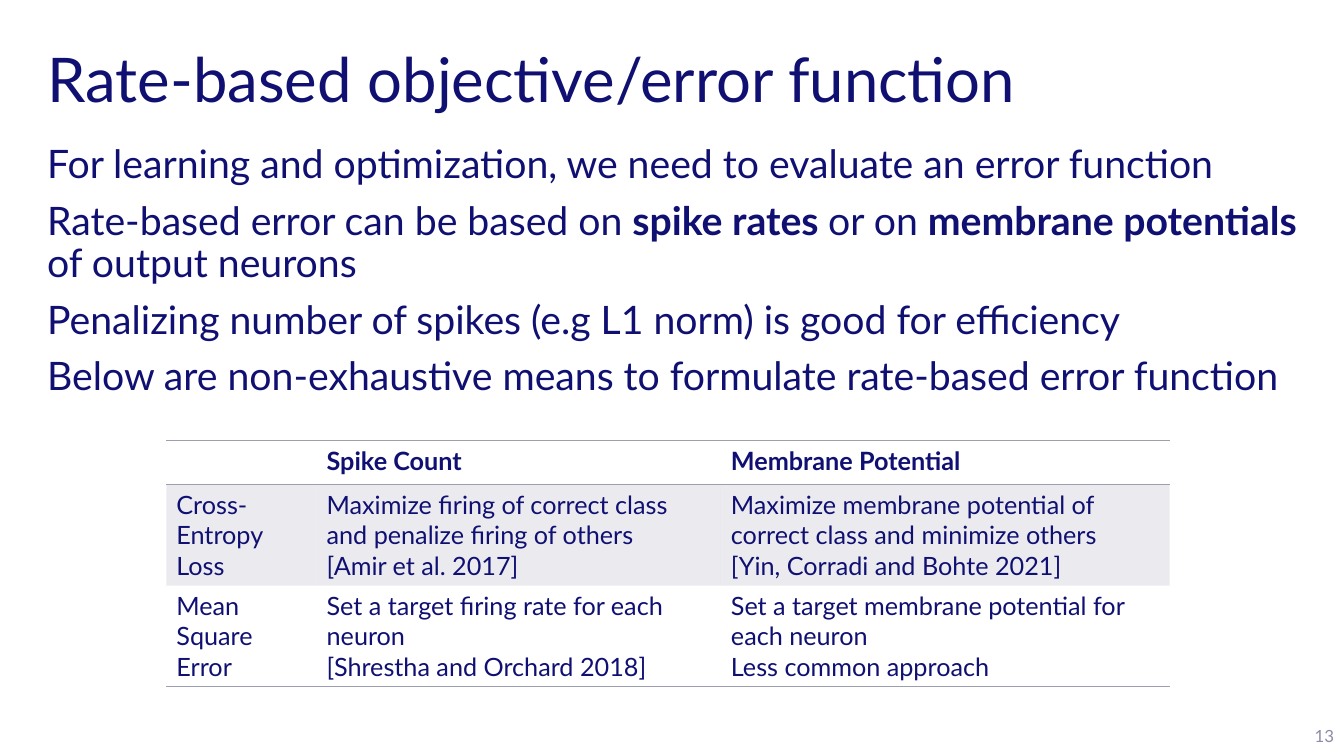
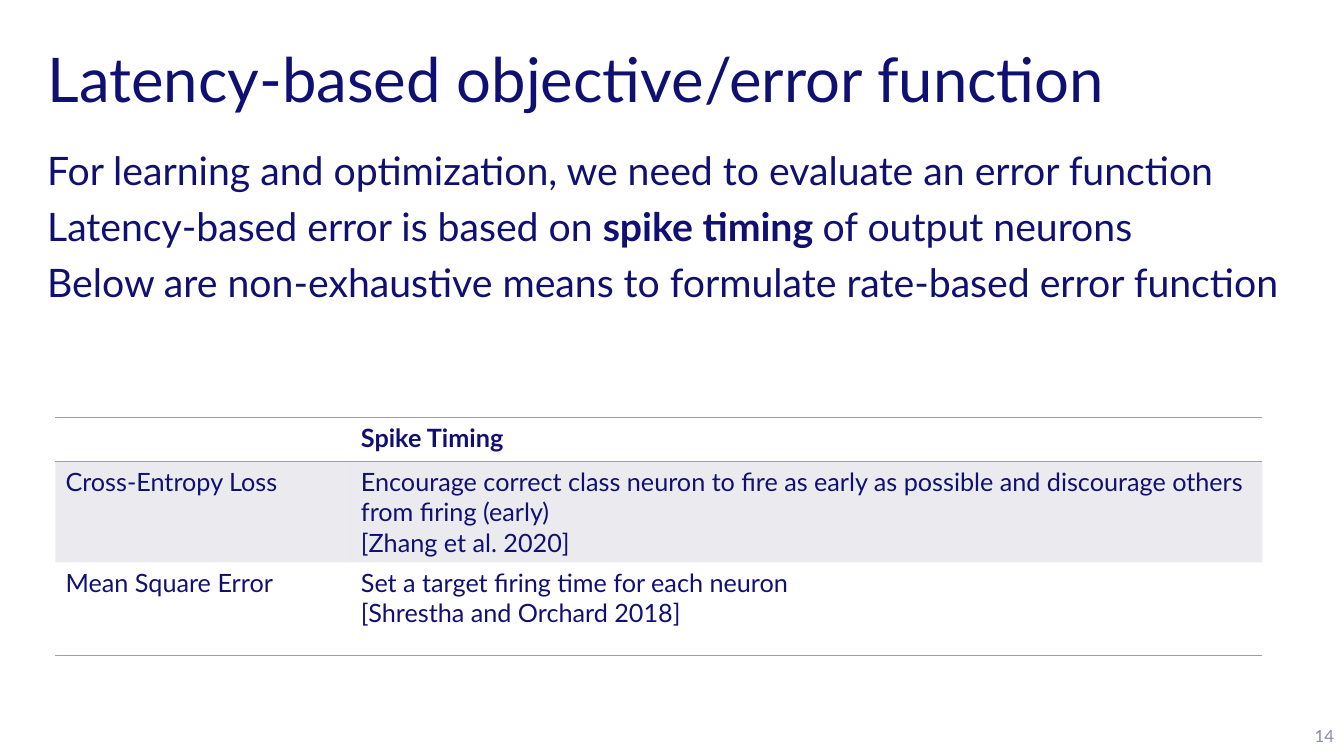
from dataclasses import dataclass

import lxml.etree
import pptx
import pptx.dml.color
import pptx.enum.text
import pptx.oxml.ns
import pptx.util

Inches = pptx.util.Inches
Pt = pptx.util.Pt
ANCHOR = pptx.enum.text.MSO_ANCHOR
ALIGN = pptx.enum.text.PP_ALIGN

# Shared look
FONT = "Lato"
NAVY = "101073"
RULE_GREY = "9E9EB1"
NUMBER_GREY = "8C8CA6"
BAND_OPACITY = 20
LEFT, TEXT_WIDTH = 0.37, 12.6
TITLE_ONLY = 5
PLAIN_TABLE_STYLE = "{2D5ABB26-0587-4C30-8999-92F81FD0307C}"


@dataclass
class Span:
    text: str
    bold: bool = False


@dataclass
class LossTable:
    left: float
    top: float
    columns: list[float]
    rows: list[float]
    cells: list[list[list[str]]]  # rows of cells, each a list of paragraphs


@dataclass
class ErrorSlide:
    number: int
    title: str
    body_top: float
    body: list[list[Span]]
    losses: LossTable


def rgb(value: str) -> pptx.dml.color.RGBColor:
    return pptx.dml.color.RGBColor.from_string(value)


def add_run(paragraph, span: Span, size: float, color: str = NAVY) -> None:
    run = paragraph.add_run()
    run.text = span.text
    run.font.name = FONT
    run.font.size = Pt(size)
    run.font.bold = span.bold
    run.font.color.rgb = rgb(color)


def fill_frame(frame, paragraphs: list[list[Span]], size: float, color: str = NAVY,
               align=ALIGN.LEFT, spacing: float = 1.0, before: float = 0) -> None:
    for index, spans in enumerate(paragraphs):
        paragraph = frame.add_paragraph() if index else frame.paragraphs[0]
        paragraph.alignment = align
        paragraph.line_spacing = spacing
        paragraph.space_before = Pt(before)
        for span in spans:
            add_run(paragraph, span, size, color)


def place(shape, left: float, top: float, width: float, height: float, anchor):
    """Position a text shape and return its wrapping text frame."""
    shape.left, shape.top = Inches(left), Inches(top)
    shape.width, shape.height = Inches(width), Inches(height)
    frame = shape.text_frame
    frame.word_wrap = True
    frame.auto_size = pptx.enum.text.MSO_AUTO_SIZE.NONE
    frame.vertical_anchor = anchor
    return frame


def add_text_box(slide, left: float, top: float, width: float, height: float, anchor):
    box = slide.shapes.add_textbox(0, 0, 0, 0)
    return place(box, left, top, width, height, anchor)


def sub(parent, tag: str, **attributes: str):
    return lxml.etree.SubElement(parent, pptx.oxml.ns.qn(tag), **attributes)


def shade(cell) -> None:
    cell.fill.solid()
    cell.fill.fore_color.rgb = rgb(RULE_GREY)
    for color in cell.fill._xPr.iter(pptx.oxml.ns.qn("a:srgbClr")):
        sub(color, "a:alpha", val=str(BAND_OPACITY * 1000))


def set_rules(cell, edges: str) -> None:
    """Draw the named edges (of L, R, T, B) and clear the others."""
    properties = cell._tc.get_or_add_tcPr()
    for index, edge in enumerate("LRTB"):
        line = sub(properties, f"a:ln{edge}", w=str(Pt(1)))
        if edge in edges:
            sub(sub(line, "a:solidFill"), "a:srgbClr", val=RULE_GREY)
        else:
            sub(line, "a:noFill")
        properties.insert(index, line)  # lines come before the cell fill


def add_loss_table(slide, losses: LossTable) -> None:
    table = slide.shapes.add_table(
        len(losses.rows), len(losses.columns), Inches(losses.left), Inches(losses.top),
        Inches(sum(losses.columns)), Inches(sum(losses.rows))).table
    table.first_row = table.horz_banding = False
    table._tbl.tblPr.find(pptx.oxml.ns.qn("a:tableStyleId")).text = PLAIN_TABLE_STYLE
    for column, width in zip(table.columns, losses.columns):
        column.width = Inches(width)
    for row, height in zip(table.rows, losses.rows):
        row.height = Inches(height)

    row_rules = ["TB", "T", "B"]
    for r, row_cells in enumerate(losses.cells):
        for c, lines in enumerate(row_cells):
            cell = table.cell(r, c)
            fill_frame(cell.text_frame, [[Span(line, bold=r == 0)] for line in lines], 18)
            if r == 1:
                shade(cell)
            else:
                cell.fill.background()
            set_rules(cell, row_rules[r])


def add_error_slide(deck, content: ErrorSlide) -> None:
    slide = deck.slides.add_slide(deck.slide_layouts[TITLE_ONLY])
    # Title
    title = place(slide.shapes.title, LEFT, 0.4, TEXT_WIDTH, 0.83, ANCHOR.MIDDLE)
    fill_frame(title, [[Span(content.title)]], 44, spacing=0.9)
    # Body
    body = add_text_box(slide, LEFT, content.body_top, TEXT_WIDTH, 5.51, ANCHOR.TOP)
    fill_frame(body, content.body, 28, spacing=0.9, before=10)
    # Slide number
    number = add_text_box(slide, 12.65, 7.1, 0.68, 0.4, ANCHOR.MIDDLE)
    fill_frame(number, [[Span(str(content.number))]], 12, NUMBER_GREY, ALIGN.RIGHT)
    # Loss table
    add_loss_table(slide, content.losses)


INTRO = [Span("For learning and optimization, we need to evaluate an error function")]
OUTLOOK = [Span("Below are non-exhaustive means to formulate rate-based error function")]

SLIDES = [
    ErrorSlide(
        13, "Rate-based objective/error function", 1.39,
        [
            INTRO,
            [Span("Rate-based error can be based on "), Span("spike rates ", True),
             Span("or on "), Span("membrane potentials", True),
             Span(" of output neurons")],
            [Span("Penalizing number of spikes (e.g L1 norm) is good for efficiency")],
            OUTLOOK,
        ],
        LossTable(1.65, 4.37, [1.49, 4.01, 4.45], [0.44, 1.0, 1.0], [
            [[], ["Spike Count"], ["Membrane Potential"]],
            [["Cross-Entropy Loss"],
             ["Maximize firing of correct class and penalize firing of others",
              "[Amir et al. 2017]"],
             ["Maximize membrane potential of correct class and minimize others",
              "[Yin, Corradi and Bohte 2021]"]],
            [["Mean Square Error"],
             ["Set a target firing rate for each neuron", "[Shrestha and Orchard 2018]"],
             ["Set a target membrane potential for each neuron", "Less common approach"]],
        ]),
    ),
    ErrorSlide(
        14, "Latency-based objective/error function", 1.45,
        [
            INTRO,
            [Span("Latency-based error is based on "), Span("spike timing ", True),
             Span("of output neurons")],
            OUTLOOK,
        ],
        LossTable(0.55, 4.14, [2.93, 9.04], [0.44, 1.0, 0.92], [
            [[], ["Spike Timing"]],
            [["Cross-Entropy Loss"],
             ["Encourage correct class neuron to fire as early as possible and "
              "discourage others from firing (early)", "[Zhang et al. 2020]"]],
            [["Mean Square Error"],
             ["Set a target firing time for each neuron", "[Shrestha and Orchard 2018]"]],
        ]),
    ),
]


def main() -> None:
    deck = pptx.Presentation()
    deck.slide_width, deck.slide_height = Inches(13.33), Inches(7.5)
    for content in SLIDES:
        add_error_slide(deck, content)
    deck.save("out.pptx")


if __name__ == "__main__":
    main()
